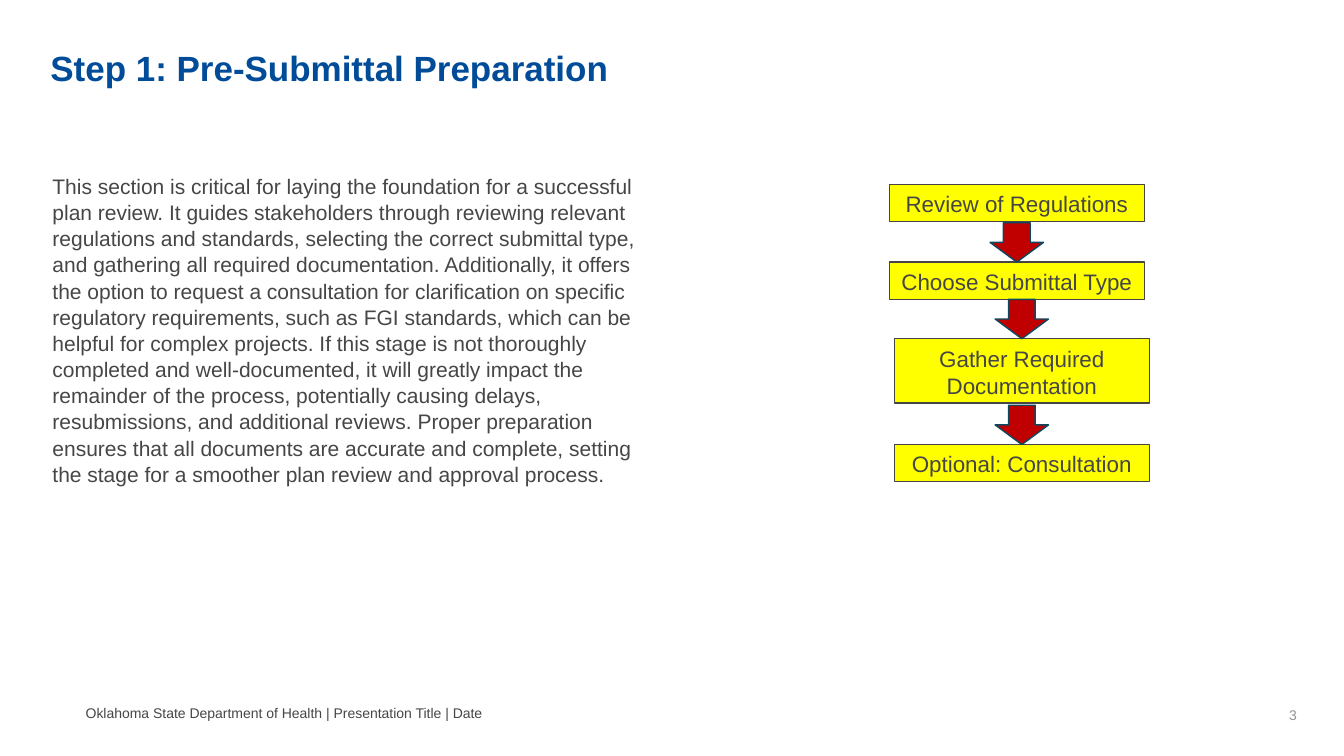
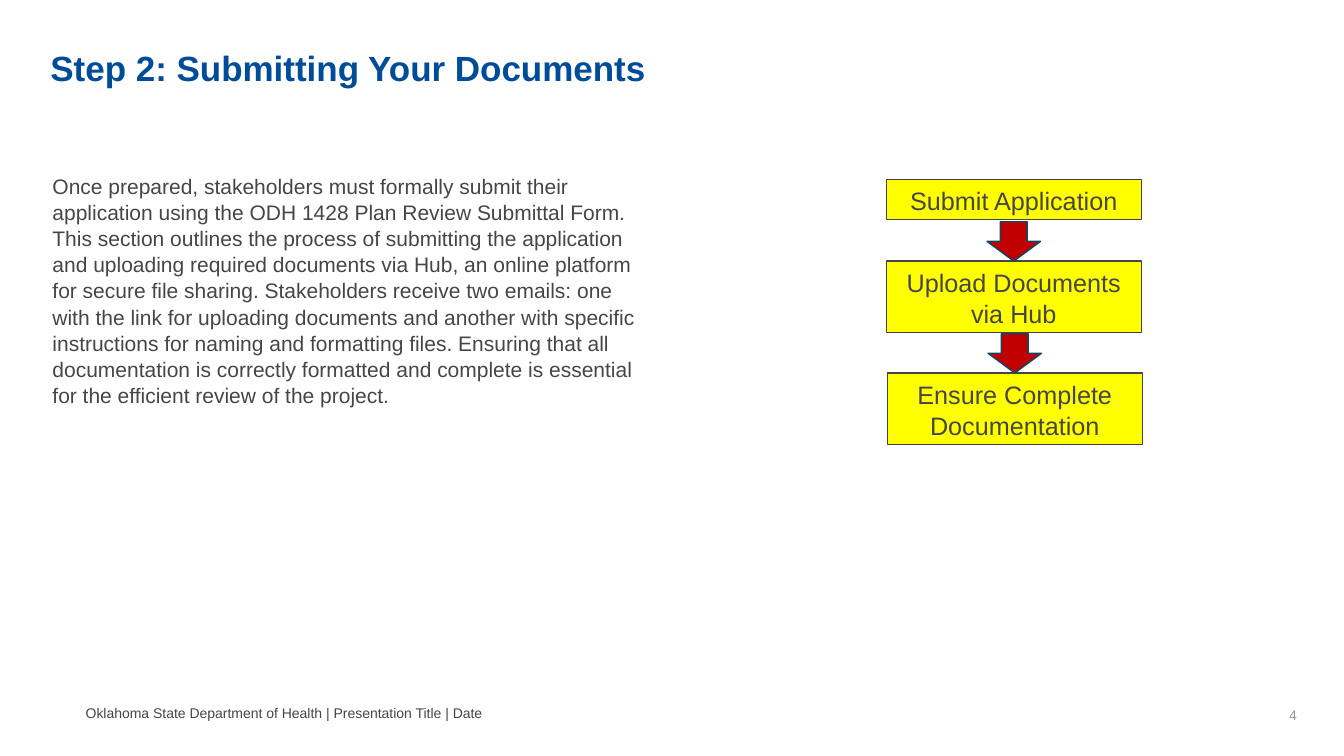
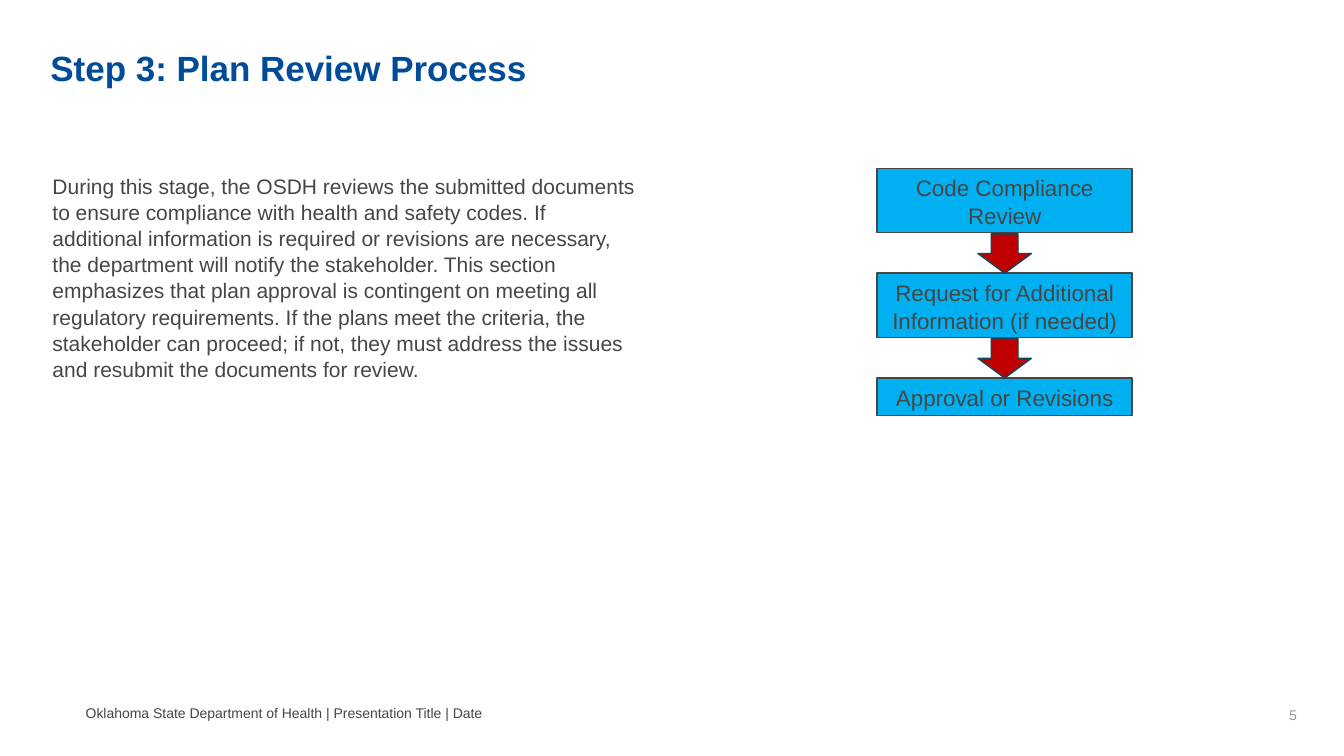
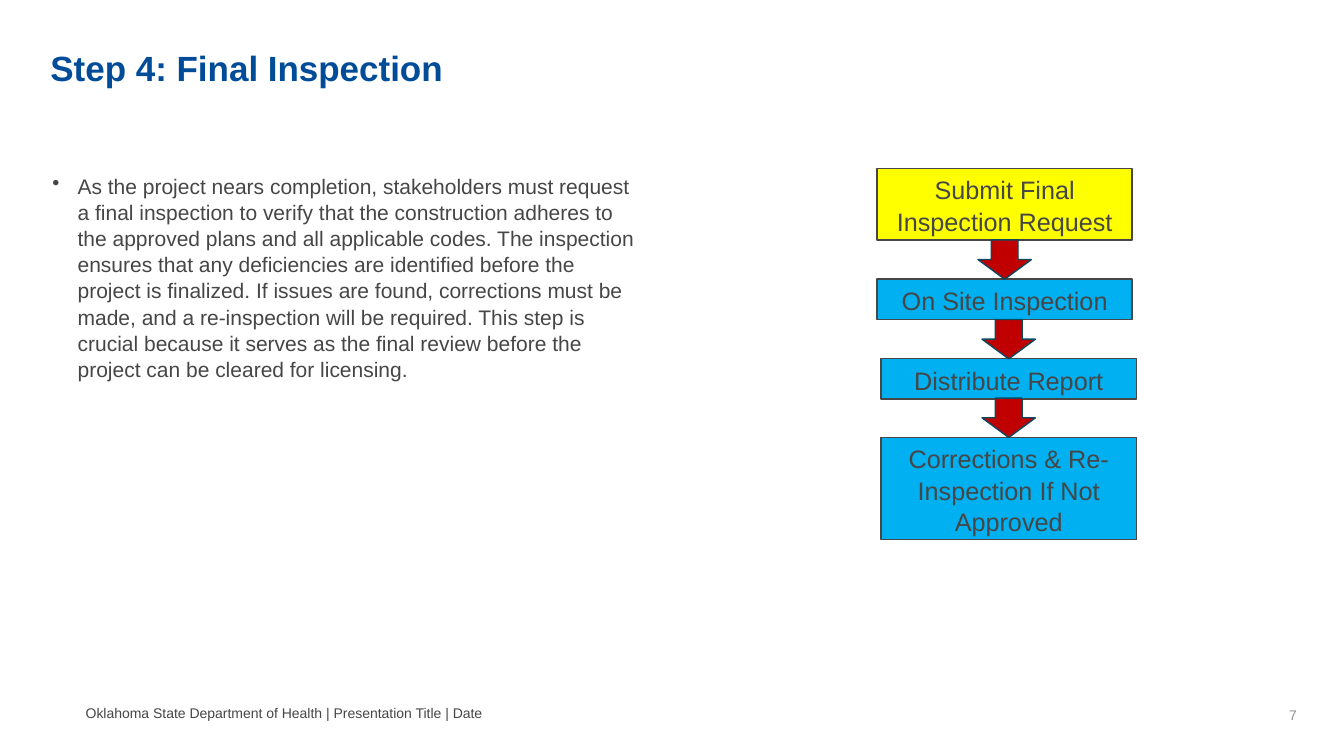
"""Build four slides on the steps of a plan review, each with a flow of boxes."""
import pptx
import pptx.dml.color
import pptx.enum.shapes
import pptx.enum.text
import pptx.oxml
import pptx.util

Inches = pptx.util.Inches
Pt = pptx.util.Pt
Align = pptx.enum.text.PP_ALIGN
Anchor = pptx.enum.text.MSO_ANCHOR
Shape = pptx.enum.shapes.MSO_SHAPE

COLOURS = {
    "title": "004C99",
    "text": "464646",
    "number": "949494",
    "applicant": "FFFF00",
    "department": "00B0F0",
    "arrow": "C00000",
    "arrow_line": "0C4961",
}
FOOTER = "Oklahoma State Department of Health | Presentation Title | Date"
BOX_WIDTH = 2.53
ARROW_WIDTH, ARROW_HEIGHT = 0.53, 0.39
LINE_SPACING = 1.04

STEPS = [
    {
        "title": "Step 1: Pre-Submittal Preparation",
        "number": "3",
        "bullet": False,
        "body_height": 3.12,
        "size": 16,
        "body": "This section is critical for laying the foundation for a successful plan review. It guides "
                "stakeholders through reviewing relevant regulations and standards, selecting the correct "
                "submittal type, and gathering all required documentation. Additionally, it offers the option "
                "to request a consultation for clarification on specific regulatory requirements, such as FGI "
                "standards, which can be helpful for complex projects. If this stage is not thoroughly "
                "completed and well-documented, it will greatly impact the remainder of the process, "
                "potentially causing delays, resubmissions, and additional reviews. Proper preparation ensures "
                "that all documents are accurate and complete, setting the stage for a smoother plan review "
                "and approval process.",
        "flow": [
            ("Review of Regulations", "applicant", 8.82, 1.83, 0.37),
            ("Choose Submittal Type", "applicant", 8.82, 2.6, 0.37),
            ("Gather Required Documentation", "applicant", 8.87, 3.36, 0.64),
            ("Optional: Consultation", "applicant", 8.87, 4.41, 0.37),
        ],
    },
    {
        "title": "Step 2: Submitting Your Documents",
        "number": "4",
        "bullet": False,
        "body_height": 2.53,
        "size": 18,
        "body": "Once prepared, stakeholders must formally submit their application using the ODH 1428 Plan "
                "Review Submittal Form. This section outlines the process of submitting the application and "
                "uploading required documents via Hub, an online platform for secure file sharing. "
                "Stakeholders receive two emails: one with the link for uploading documents and another with "
                "specific instructions for naming and formatting files. Ensuring that all documentation is "
                "correctly formatted and complete is essential for the efficient review of the project.",
        "flow": [
            ("Submit Application", "applicant", 8.79, 1.78, 0.4),
            ("Upload Documents via Hub", "applicant", 8.79, 2.59, 0.71),
            ("Ensure Complete Documentation", "applicant", 8.8, 3.7, 0.71),
        ],
    },
    {
        "title": "Step 3: Plan Review Process",
        "number": "5",
        "bullet": False,
        "body_height": 2.53,
        "size": 16,
        "body": "During this stage, the OSDH reviews the submitted documents to ensure compliance with health "
                "and safety codes. If additional information is required or revisions are necessary, the "
                "department will notify the stakeholder. This section emphasizes that plan approval is "
                "contingent on meeting all regulatory requirements. If the plans meet the criteria, the "
                "stakeholder can proceed; if not, they must address the issues and resubmit the documents "
                "for review.",
        "flow": [
            ("Code Compliance Review", "department", 8.7, 1.67, 0.64),
            ("Request for Additional Information (if needed)", "department", 8.7, 2.71, 0.64),
            ("Approval or Revisions", "department", 8.7, 3.75, 0.37),
        ],
    },
    {
        "title": "Step 4: Final Inspection",
        "number": "7",
        "bullet": True,
        "body_height": 2.53,
        "size": 18,
        "body": "As the project nears completion, stakeholders must request a final inspection to verify that "
                "the construction adheres to the approved plans and all applicable codes. The inspection "
                "ensures that any deficiencies are identified before the project is finalized. If issues are "
                "found, corrections must be made, and a re-inspection will be required. This step is crucial "
                "because it serves as the final review before the project can be cleared for licensing.",
        "flow": [
            ("Submit Final Inspection Request", "applicant", 8.7, 1.67, 0.71),
            ("On Site Inspection", "department", 8.7, 2.77, 0.4),
            ("Distribute Report", "department", 8.74, 3.56, 0.4),
            ("Corrections & Re-Inspection If Not Approved", "department", 8.74, 4.34, 1.01),
        ],
    },
]


def write(box, text, size, colour="text", align=Align.LEFT, anchor=Anchor.TOP, inset=0.1, bold=False):
    frame = box.text_frame
    frame.text = text
    frame.word_wrap = True
    frame.vertical_anchor = anchor
    frame.margin_left = Inches(inset)
    para = frame.paragraphs[0]
    para.alignment = align
    span = para.runs[0]
    span.font.name = "Arial"
    span.font.size = Pt(size)
    span.font.bold = bold
    span.font.color.rgb = pptx.dml.color.RGBColor.from_string(COLOURS[colour])
    return para


def draw(page, kind, left, top, width, height, fill, line):
    shape = page.shapes.add_shape(kind, Inches(left), Inches(top), Inches(width), Inches(height))
    shape.shadow.inherit = False
    shape.fill.solid()
    shape.fill.fore_color.rgb = pptx.dml.color.RGBColor.from_string(COLOURS[fill])
    shape.line.color.rgb = pptx.dml.color.RGBColor.from_string(COLOURS[line])
    shape.line.width = Pt(1)
    return shape


deck = pptx.Presentation()
deck.slide_width = Inches(13.33)
deck.slide_height = Inches(7.5)

for step in STEPS:
    page = deck.slides.add_slide(deck.slide_layouts[6])

    title = page.shapes.add_textbox(Inches(0.5), Inches(0.41), Inches(12.14), Inches(0.92))
    write(title, step["title"], 25, "title", inset=0, bold=True)

    body = page.shapes.add_textbox(Inches(0.52), Inches(1.66), Inches(5.89), Inches(step["body_height"]))
    para = write(body, step["body"], 15, inset=0)
    para.line_spacing = LINE_SPACING
    if step["bullet"]:
        properties = para._p.get_or_add_pPr()
        properties.set("marL", str(Inches(0.25)))
        properties.set("indent", str(-Inches(0.25)))
        bullet = pptx.oxml.parse_xml(
            '<a:buChar xmlns:a="http://schemas.openxmlformats.org/drawingml/2006/main" char="•"/>')
        properties.append(bullet)

    footer = page.shapes.add_textbox(Inches(0.85), Inches(6.96), Inches(8.9), Inches(0.22))
    write(footer, FOOTER, 10, anchor=Anchor.MIDDLE, inset=0)
    number = page.shapes.add_textbox(Inches(9.96), Inches(6.98), Inches(3), Inches(0.22))
    write(number, step["number"], 10, "number", Align.RIGHT, Anchor.MIDDLE)

    for label, owner, left, top, height in step["flow"]:
        box = draw(page, Shape.RECTANGLE, left, top, BOX_WIDTH, height, owner, "text")
        para = write(box, label, step["size"], align=Align.CENTER)
        para.line_spacing = LINE_SPACING
        box.text_frame.auto_size = pptx.enum.text.MSO_AUTO_SIZE.SHAPE_TO_FIT_TEXT

    for label, owner, left, top, height in step["flow"][1:]:
        draw(page, Shape.DOWN_ARROW, left + (BOX_WIDTH - ARROW_WIDTH) / 2, top - ARROW_HEIGHT,
             ARROW_WIDTH, ARROW_HEIGHT, "arrow", "arrow_line")

deck.save("out.pptx")
